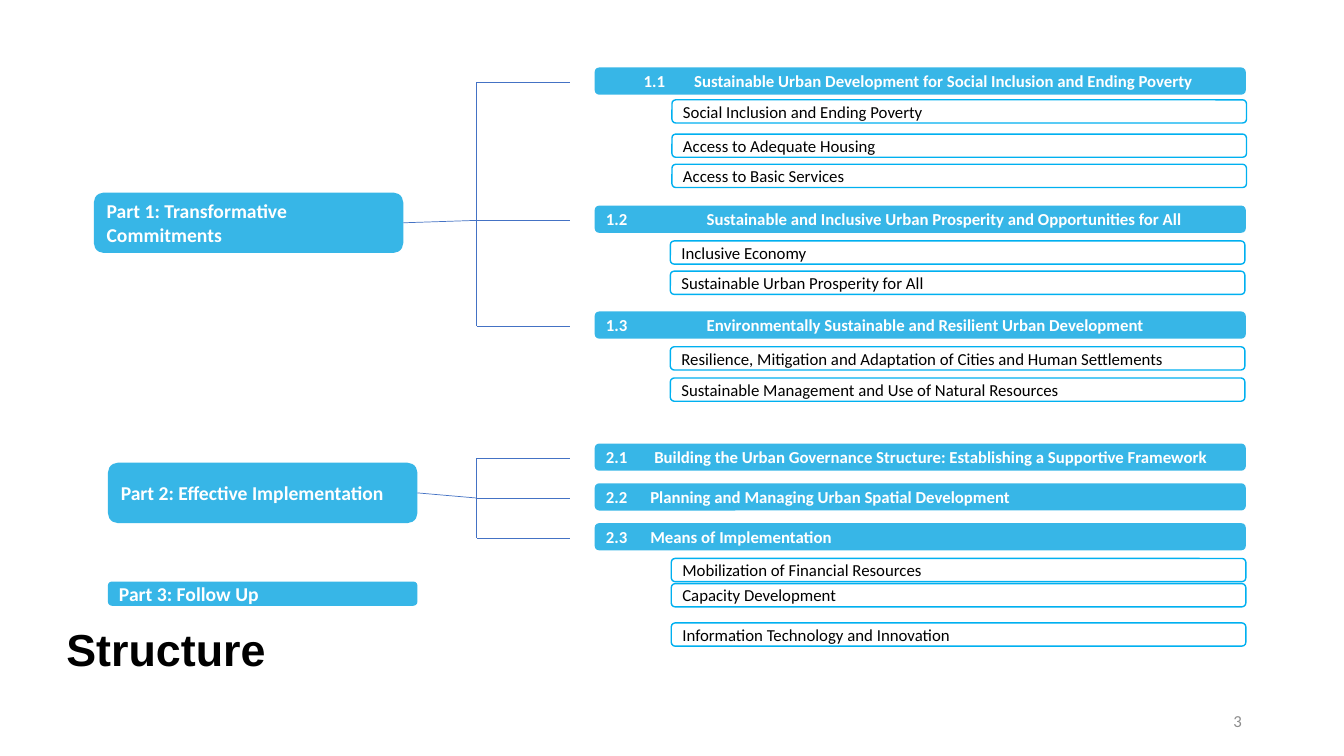
"""Build the Structure slide: three parts branching into headings and topics."""
from lxml import etree
from pptx import Presentation
from pptx.dml.color import RGBColor
from pptx.enum.shapes import MSO_CONNECTOR, MSO_SHAPE
from pptx.enum.text import MSO_ANCHOR, PP_ALIGN
from pptx.oxml.ns import qn
from pptx.util import Inches, Pt

ROUNDED = MSO_SHAPE.FLOWCHART_ALTERNATE_PROCESS
STRAIGHT = MSO_CONNECTOR.STRAIGHT
LEFT, CENTER, RIGHT = PP_ALIGN.LEFT, PP_ALIGN.CENTER, PP_ALIGN.RIGHT
MIDDLE, BOTTOM = MSO_ANCHOR.MIDDLE, MSO_ANCHOR.BOTTOM
COLORS = {"bar": "1CADE4", "outline": "00B0F0", "branch": "4472C4",
          "white": "FFFFFF", "black": "000000", "number": "8C8C8C"}

presentation = Presentation()
presentation.slide_width = Inches(13.33)
presentation.slide_height = Inches(7.5)
slide = presentation.slides.add_slide(presentation.slide_layouts[6])
COLUMN = presentation.slide_width / 100
ROW = presentation.slide_height / 100

PART_WIDTH = 23.03
HEADING_LEFT, HEADING_WIDTH, HEADING_HEIGHT = 44.25, 48.45, 3.6
TOPIC_WIDTH, TOPIC_HEIGHT = 42.75, 3.07
SPINE, BRANCH_END = 35.48, 42.38
BRANCH_DROP = HEADING_HEIGHT / 2 + 0.15


def write_text(shape, text, size=12, color="black", bold=False, font="Calibri",
               align=LEFT, anchor=MIDDLE, tab=None):
    frame = shape.text_frame
    frame.word_wrap = True
    frame.vertical_anchor = anchor
    paragraph = frame.paragraphs[0]
    paragraph.alignment = align
    run = paragraph.add_run()
    run.text = text
    run.font.size = Pt(size)
    run.font.name = font
    run.font.bold = bold
    run.font.color.rgb = RGBColor.from_string(COLORS[color])
    if tab:
        stops = etree.SubElement(paragraph._p.get_or_add_pPr(), qn("a:tabLst"))
        etree.SubElement(stops, qn("a:tab"), pos=str(Inches(tab)), algn="l")


def add_box(left, top, width, height, filled=True):
    box = slide.shapes.add_shape(ROUNDED, round(left * COLUMN), round(top * ROW),
                                 round(width * COLUMN), round(height * ROW))
    box.shadow.inherit = False
    if filled:
        box.fill.solid()
        box.fill.fore_color.rgb = RGBColor.from_string(COLORS["bar"])
        color = box.fill._xPr.find(qn("a:solidFill"))[0]
        etree.SubElement(color, qn("a:alpha"), val="88000")
        box.line.fill.background()
    else:
        box.fill.background()
        box.line.color.rgb = RGBColor.from_string(COLORS["outline"])
        box.line.width = Pt(1)
    return box


labels = [
    ("Structure", 4.2, 66.67, 32.26, 23.33,
     dict(size=32, bold=True, font="Arial", anchor=BOTTOM)),
    ("3", 70.65, 92.67, 22.5, 5.33, dict(color="number", align=RIGHT)),
]
for text, left, top, width, height, style in labels:
    label = slide.shapes.add_textbox(round(left * COLUMN), round(top * ROW),
                                     round(width * COLUMN), round(height * ROW))
    write_text(label, text, **style)

parts = [
    ("Part 1: Transformative Commitments", 6.98, 25.47, 8, [
        ("1.1\tSustainable Urban Development for Social Inclusion and Ending Poverty ",
         8.93, CENTER, None, 50,
         [("Social Inclusion and Ending Poverty", 13.2),
          ("Access to Adequate Housing", 17.73),
          ("Access to Basic Services", 21.73)]),
        ("1.2\tSustainable and Inclusive Urban Prosperity and Opportunities for All",
         27.2, LEFT, 1, 49.88,
         [("Inclusive Economy", 31.87),
          ("Sustainable Urban Prosperity for All", 35.87)]),
        ("1.3\tEnvironmentally Sustainable and Resilient Urban Development",
         41.2, LEFT, 1, 49.88,
         [("Resilience, Mitigation and Adaptation of Cities and Human Settlements", 45.87),
          ("Sustainable Management and Use of Natural Resources", 50)]),
    ]),
    ("Part 2: Effective Implementation", 8.03, 61.2, 8, [
        ("2.1\tBuilding the Urban Governance Structure: Establishing a Supportive Framework",
         58.67, LEFT, 0.48, 49.95, []),
        ("2.2\tPlanning and Managing Urban Spatial Development",
         63.93, LEFT, 0.44, 49.95, []),
        ("2.3\tMeans of Implementation", 69.2, LEFT, 0.44, 49.95,
         [("Mobilization of Financial Resources", 73.87),
          ("Capacity Development", 77.2),
          ("Information Technology and Innovation", 82.4)]),
    ]),
    ("Part 3: Follow Up", 8.03, 76.93, 3.2, []),
]

for part_text, part_left, part_top, part_height, headings in parts:
    part = add_box(part_left, part_top, PART_WIDTH, part_height)
    write_text(part, part_text, size=14, color="white", bold=True)
    for text, top, align, tab, topic_left, topics in headings:
        heading = add_box(HEADING_LEFT, top, HEADING_WIDTH, HEADING_HEIGHT)
        write_text(heading, text, color="white", bold=True, align=align, tab=tab)
        for topic_text, topic_top in topics:
            topic = add_box(topic_left, topic_top, TOPIC_WIDTH, TOPIC_HEIGHT, filled=False)
            write_text(topic, topic_text)

    if not headings:
        continue
    levels = [heading[1] + BRANCH_DROP for heading in headings]
    part_right, part_middle = part_left + PART_WIDTH, part_top + part_height / 2
    stub = (part_right, part_middle, SPINE, levels[1])
    spine = (SPINE, levels[-1], SPINE, levels[0])
    branches = [(SPINE, level, BRANCH_END, level) for level in levels]
    for line in [stub, spine, *branches]:
        start_x, start_y, end_x, end_y = line
        connector = slide.shapes.add_connector(
            STRAIGHT, round(start_x * COLUMN), round(start_y * ROW),
            round(end_x * COLUMN), round(end_y * ROW))
        connector.line.color.rgb = RGBColor.from_string(COLORS["branch"])
        connector.line.width = Pt(0.5)
        etree.SubElement(connector._element.spPr, qn("a:effectLst"))
        if line is stub:
            connector.begin_connect(part, 3)

presentation.save("out.pptx")
